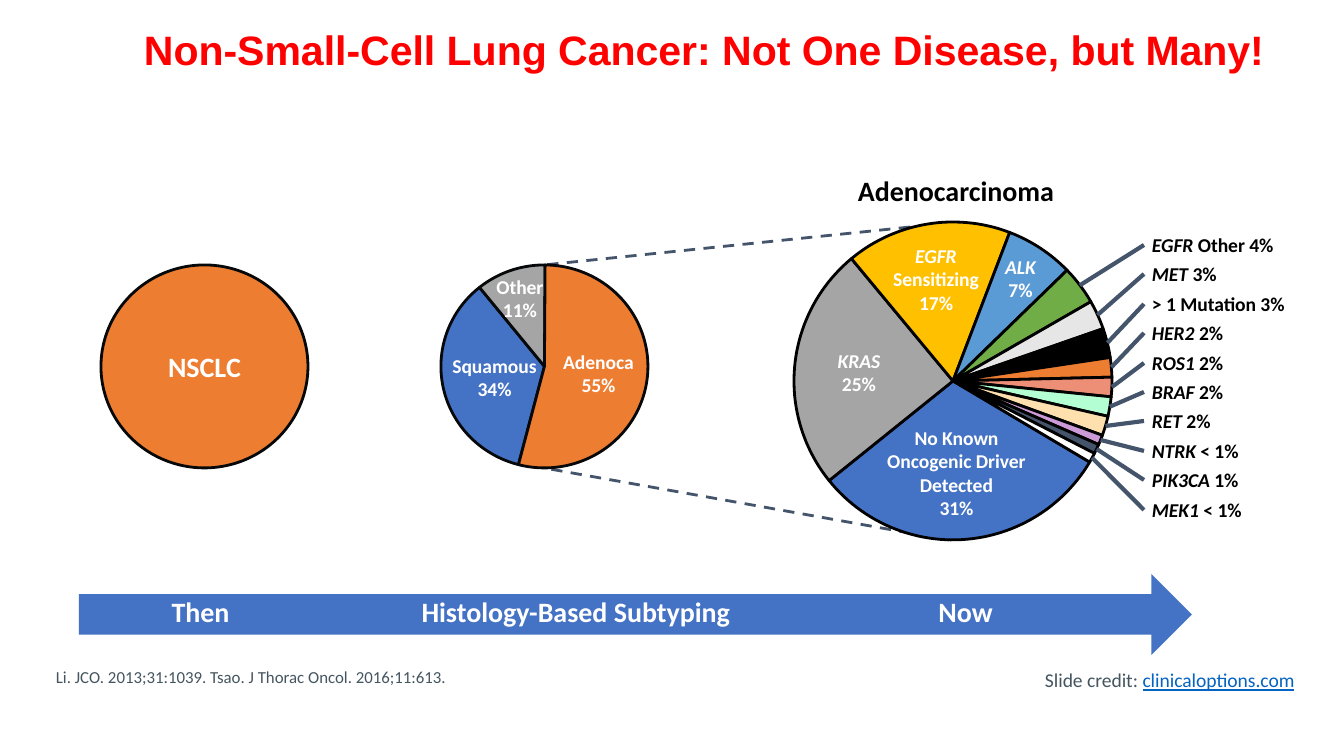
from math import cos, radians, sin

from pptx import Presentation
from pptx.dml.color import RGBColor
from pptx.enum.dml import MSO_LINE_DASH_STYLE as Dash
from pptx.enum.shapes import MSO_CONNECTOR as Link, MSO_SHAPE as Form
from pptx.enum.text import MSO_ANCHOR as Anchor, PP_ALIGN as Align
from pptx.oxml.ns import qn
from pptx.util import Emu, Pt

SCALE = 914400 / 134.4
WHITE, BLACK, RED = "FFFFFF", "000000", "FF0000"
BLUE, ORANGE, GREY = "4472C4", "ED7D31", "A5A5A5"
SLATE, NOTE, LINK = "44546A", "455560", "0563C1"
EDGE = "060809"

SMALL = {"name": "Calibri", "size": Pt(10.5), "bold": True}
LARGE = {"name": "Calibri", "size": Pt(15), "bold": True}
HEAD = {"name": "Arial", "size": Pt(22), "bold": True}
CREDIT = {"name": "Calibri", "size": Pt(10.5), "bold": False}
CITE = {"name": "Calibri", "size": Pt(9), "bold": False}

# Histology pie: fill, start and end angle
TYPES = [(BLUE, 104.8, 230.6), (GREY, 230.6, 270.4), (ORANGE, 270.4, 104.8)]

# Adenocarcinoma pie: fill, share, outside label (italics between underscores)
GENES = [
    (BLUE, 31, ""), (GREY, 25, ""), ("FFC000", 17, ""), ("5B9BD5", 7, ""),
    ("70AD47", 4, "_EGFR_ Other 4%"), ("E7E6E6", 3, "_MET_ 3%"),
    (BLACK, 3, "> 1 Mutation 3%"), (ORANGE, 2, "_HER2_ 2%"),
    ("ED8F76", 2, "_ROS1_ 2%"), ("B3FFD3", 2, "_BRAF_ 2%"),
    ("FEE0AE", 2, "_RET_ 2%"), ("CC9AD7", 1, "_NTRK_ < 1%"),
    (SLATE, 1, "_PIK3CA_ 1%"), (WHITE, 1, "_MEK1_ < 1%"),
]
MID_X, MID_Y, RADIUS, FIRST = 953, 381, 159, 30.7

# Labels inside the slices
INNER = [
    ((415, 349, 159, 58), ["Squamous", "34%"]),
    ((481, 270, 78, 58), ["Other", "11%"]),
    ((540, 345, 117, 58), ["Adenoca", "55%"]),
    ((820, 344, 78, 58), ["_KRAS_", "25%"]),
    ((985, 250, 71, 58), ["_ALK_", "7%"]),
    ((874, 239, 124, 82), ["_EGFR_ Sensitizing", "17%"]),
    ((866, 421, 181, 105), ["No Known Oncogenic Driver Detected", "31%"]),
]

# Headings on and above the arrow
STAGES = [
    ((152, 586, 97, 51), "Then", WHITE),
    ((298, 589, 556, 44), "Histology-Based Subtyping", WHITE),
    ((917, 586, 97, 51), "Now", WHITE),
    ((794, 165, 324, 51), "Adenocarcinoma", BLACK),
]


def px(n):
    return Emu(round(n * SCALE))


def ink(color, tone):
    color.rgb = RGBColor.from_string(tone)


def style(font, look, tone):
    for key, value in look.items():
        setattr(font, key, value)
    ink(font.color, tone)


def write(frame, lines, look, tone, align=Align.LEFT, anchor=Anchor.TOP):
    setup = {"word_wrap": True, "vertical_anchor": anchor,
             "margin_left": px(10), "margin_right": px(10),
             "margin_top": px(5), "margin_bottom": px(5)}
    for key, value in setup.items():
        setattr(frame, key, value)
    for i, line in enumerate(lines):
        para = frame.add_paragraph() if i else frame.paragraphs[0]
        para.alignment = align
        for j, part in enumerate(line.split("_")):
            if part:
                run = para.add_run()
                run.text = part
                style(run.font, {**look, "italic": j % 2 == 1}, tone)
    return para


def label(slide, box, lines, look, tone, **opts):
    area = slide.shapes.add_textbox(*map(px, box))
    return write(area.text_frame, lines, look, tone, **opts)


def paint(shape, fill, edge=None):
    shape.shadow.inherit = False
    shape.fill.solid()
    ink(shape.fill.fore_color, fill)
    if edge:
        ink(shape.line.color, edge)
        shape.line.width = Pt(1.5)
    else:
        shape.line.fill.background()


def figure(slide, form, box, fill, edge=None):
    shape = slide.shapes.add_shape(form, *map(px, box))
    paint(shape, fill, edge)
    return shape


def link(slide, start, end, width, dash=None):
    line = slide.shapes.add_connector(Link.STRAIGHT, *map(px, (*start, *end)))
    ink(line.line.color, SLATE)
    line.line.width = Pt(width)
    if dash:
        line.line.dash_style = dash
    props = line._element.spPr
    props.append(props.makeelement(qn("a:effectLst"), {}))


def rim(angle):
    turn = radians(angle)
    return MID_X + RADIUS * cos(turn), MID_Y + RADIUS * sin(turn)


def wedge(slide, start, sweep, fill):
    steps = max(4, round(sweep / 2))
    arc = [rim(start + sweep * i / steps) for i in range(steps + 1)]
    points = [(px(x), px(y)) for x, y in arc]
    draft = slide.shapes.build_freeform(px(MID_X), px(MID_Y))
    draft.add_line_segments(points, close=True)
    paint(draft.convert_to_shape(), fill, BLACK)


def gene_pie(slide):
    unit = 360 / sum(share for _, share, _ in GENES)
    angle, calls = FIRST, []
    for fill, share, text in GENES:
        wedge(slide, angle, share * unit, fill)
        if text:
            calls.append((rim(angle + share * unit / 2), text))
        angle += share * unit
    # Outside labels, evenly spaced, each with its leader
    for i, (start, text) in enumerate(calls):
        top = 228 + round(i * 29.4)
        label(slide, (1142, top, 175, 34), [text], SMALL, BLACK)
        link(slide, start, (1144, top + 17), 2.25)


def main():
    deck = Presentation()
    deck.slide_width, deck.slide_height = px(1344), px(756)
    slide = deck.slides.add_slide(deck.slide_layouts[5])

    # Title
    title = slide.shapes.title
    title.left, title.top, title.width, title.height = map(px, (134, 0, 1210, 105))
    para = write(title.text_frame,
                 ["Non-Small-Cell Lung Cancer: Not One Disease, but Many!"],
                 HEAD, RED, anchor=Anchor.MIDDLE)
    para.line_spacing = 0.9

    # Zoom lines between the pies
    link(slide, (949, 540), (544, 468), 1.5, Dash.DASH)
    link(slide, (949, 223), (544, 265), 1.5, Dash.DASH)

    # Single disease, then histology
    disc = figure(slide, Form.OVAL, (101, 265, 207, 203), ORANGE, EDGE)
    write(disc.text_frame, ["NSCLC"], LARGE, WHITE, Align.CENTER, Anchor.MIDDLE)
    for fill, *angles in TYPES:
        slice_ = figure(slide, Form.PIE, (441, 265, 207, 203), fill, EDGE)
        for i, angle in enumerate(angles):
            slice_.adjustments[i] = angle * 0.6

    # Molecular subtypes
    gene_pie(slide)
    for box, lines in INNER:
        label(slide, box, lines, SMALL, WHITE, align=Align.CENTER)

    # Time arrow and headings
    figure(slide, Form.RIGHT_ARROW, (79, 574, 1113, 81), BLUE)
    for box, text, tone in STAGES:
        label(slide, box, [text], LARGE, tone,
              align=Align.CENTER, anchor=Anchor.MIDDLE)

    # Footer
    label(slide, (46, 661, 883, 31),
          ["Li. JCO. 2013;31:1039. Tsao. J Thorac Oncol. 2016;11:613."],
          CITE, NOTE, anchor=Anchor.BOTTOM)
    para = label(slide, (1035, 663, 274, 34), ["Slide credit: "], CREDIT, NOTE)
    site = para.add_run()
    site.text = "clinicaloptions.com"
    style(site.font, {**CREDIT, "underline": True}, LINK)

    deck.save("out.pptx")


if __name__ == "__main__":
    main()
